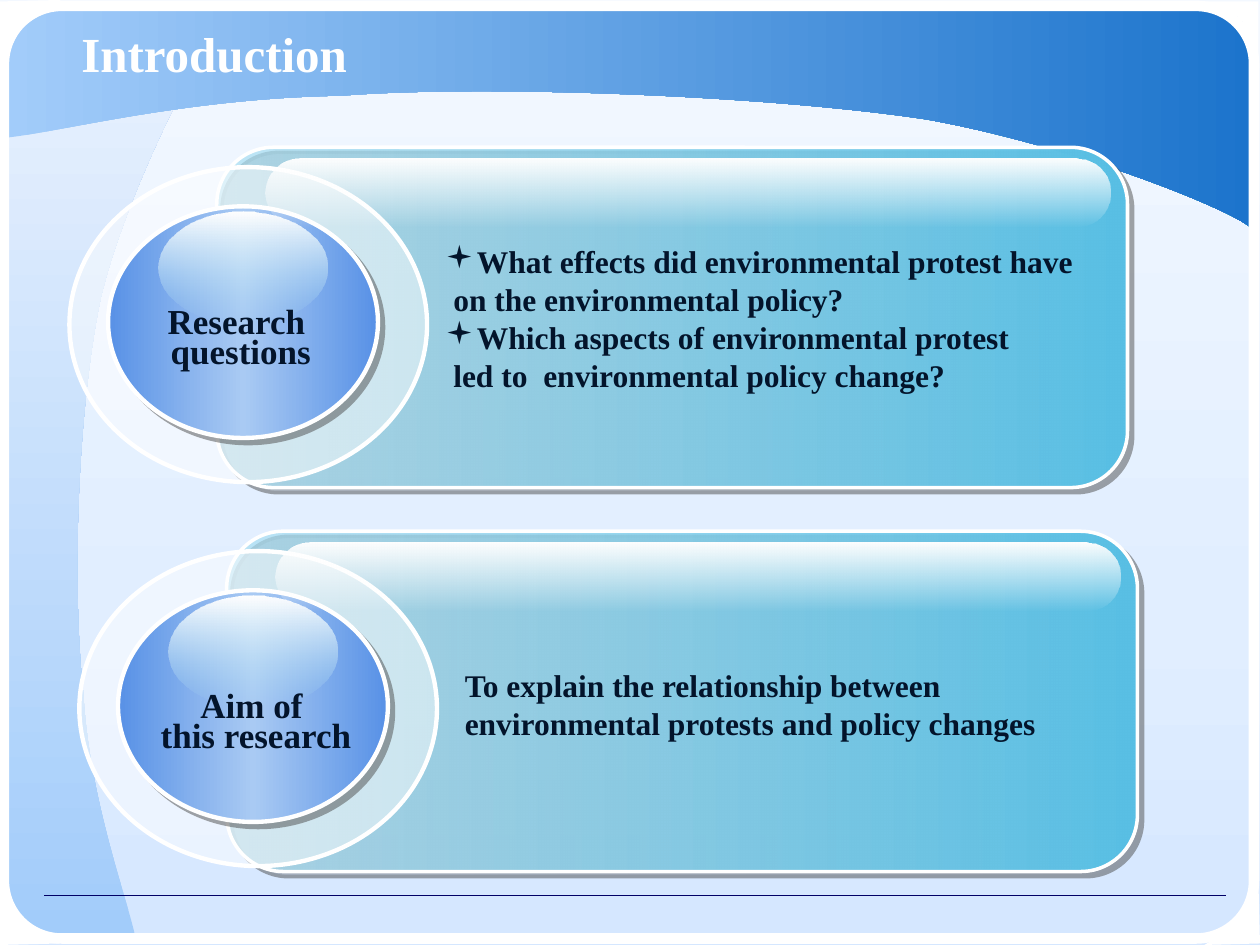
import pptx
import pptx.util
import pptx.dml.color
import pptx.enum.shapes
import pptx.enum.text
import pptx.oxml.ns
from lxml import etree

Cm, Pt = pptx.util.Cm, pptx.util.Pt
RGB = pptx.dml.color.RGBColor
KIND = pptx.enum.shapes.MSO_SHAPE
ALIGN = pptx.enum.text.PP_ALIGN
ANCHOR = pptx.enum.text.MSO_ANCHOR
qn = pptx.oxml.ns.qn

FONT = "Times New Roman"
WHITE = RGB(0xFF, 0xFF, 0xFF)
INK = RGB(0x03, 0x14, 0x2B)
NAVY = RGB(0x00, 0x00, 0x66)
GREY = RGB(0x4D, 0x4D, 0x4D)
SKY = RGB(0xA2, 0xCC, 0xFA)
PALE = RGB(0xEA, 0xF2, 0xFE)
DEEP = RGB(0x1C, 0x74, 0xCC)
AQUA = RGB(0xAA, 0xDF, 0xF2)
TEAL = RGB(0x59, 0xC0, 0xE5)
BLUE = RGB(0x58, 0x91, 0xE6)
SOFT = RGB(0xA9, 0xCA, 0xF3)
MIST = RGB(0xAC, 0xE0, 0xF2)

# Gradients: clockwise angle, then stops of place, colour and opacity in percent
BACK = (270, [(0, RGB(0xD5, 0xE7, 0xFF), 100), (35, RGB(0xE1, 0xEE, 0xFF), 100),
              (100, RGB(0xF3, 0xF8, 0xFF), 100)])
SIDE = (270, [(0, SKY, 100), (100, PALE, 100)])
BAND = (0, [(0, SKY, 100), (100, DEEP, 100)])
PANEL = (0, [(0, AQUA, 70), (100, TEAL, 100)])
BALL = (0, [(0, BLUE, 100), (50, SOFT, 100), (100, BLUE, 100)])
GLEAM = (90, [(0, WHITE, 100), (100, MIST, 0)])
GLOSS = (90, [(0, WHITE, 100), (100, WHITE, 0)])
VEIL = 49  # opacity of plain white

# Outlines in cm: a pair is a corner, six numbers are a Bezier curve
WAVES = [
    (SIDE, [(2.72, 18.85), (2.54, 18.03, 1.8, 16.1, 1.68, 13.97),
            (1.45, 11.84, 1.55, 8.33, 2.03, 6.02),
            (2.54, 3.84, 4.19, 0.66, 4.55, 0.43), (0.15, 0.43), (0.13, 18.85)]),
    (BAND, [(0.18, 2.77), (1.3, 2.64, 3.78, 1.98, 6.88, 1.93),
            (9.8, 1.7, 15.54, 1.93, 18.69, 2.41),
            (21.69, 2.95, 24.94, 4.27, 25.25, 4.62), (25.27, 0.2), (0.18, 0.18)]),
]
CORNERS = [
    [(1.22, 19.02), (0.48, 18.67), (0.13, 18.29), (0, 17.73), (0, 19.05)],
    [(0, 1.4), (0.1, 1.24, 0.33, 0.66, 0.53, 0.43),
     (0.71, 0.2, 1.27, 0.1, 1.22, 0), (0, 0.03)],
    [(25.37, 17.78), (25.07, 18.42), (24.66, 18.82), (24.28, 19.05), (25.4, 19.02)],
    [(24.16, 0.03), (24.28, 0.08, 24.69, 0.05, 25.04, 0.43),
     (25.37, 0.81, 25.32, 1.52, 25.37, 1.45), (25.37, 0.03)],
]

# Card parts: kind, box, corner, fill, line width, shadow
PARTS = [
    (KIND.ROUNDED_RECTANGLE, (4.37, 2.97, 18.36, 6.86), 0.167, PANEL, 2, True),
    (KIND.OVAL, (1.4, 3.37, 7.21, 6.35), None, VEIL, 2.5, False),
    (KIND.OVAL, (2.18, 4.16, 5.44, 4.67), None, BALL, 2.5, True),
    (KIND.OVAL, (3.2, 4.27, 3.4, 2.26), None, GLEAM, 0, False),
    (KIND.ROUNDED_RECTANGLE, (5.36, 3.2, 17.02, 1.37), 0.5, GLOSS, 0, False),
]
# Cards: shift, body box, body lines (bullet, text), label box, label lines
CARDS = [
    ((0.2, 7.74), (9.12, 13.3, 13.69, 1.8),
     [("", "To explain the relationship between environmental protests "
           "and policy changes")],
     (2.38, 13.89, 5.56, 1.45), ["Aim of ", "this research"]),
    ((0, 0), (8.73, 4.76, 14.88, 4.01),
     [("▪", "What effects did environmental protest have"),
      ("", " on the environmental policy?"),
      ("▪", "Which aspects of environmental protest"),
      ("", " led to  environmental policy change?")],
     (2.38, 6.15, 4.95, 1.47), ["Research ", "questions"]),
]


def blend(fill, root, grad):
    """Give fill the gradient; root is the element that holds it."""
    angle, stops = grad
    fill.gradient()
    fill.gradient_angle = -angle % 360
    row = next(root.iter(qn("a:gsLst")))
    for old in list(row):
        row.remove(old)
    for place, color, alpha in stops:
        stop = etree.SubElement(row, qn("a:gs"), pos=str(place * 1000))
        tint = etree.SubElement(stop, qn("a:srgbClr"), val=str(color))
        if alpha < 100:
            etree.SubElement(tint, qn("a:alpha"), val=str(alpha * 1000))


def whiten(shape, alpha=100):
    shape.fill.solid()
    shape.fill.fore_color.rgb = WHITE
    if alpha < 100:
        tint = next(shape.element.iter(qn("a:srgbClr")))
        etree.SubElement(tint, qn("a:alpha"), val=str(alpha * 1000))


def edge(shape, width):
    shape.shadow.inherit = False
    if width:
        shape.line.color.rgb = WHITE
        shape.line.width = Pt(width)
    else:
        shape.line.fill.background()


def shade(shape):
    """Cast a hard shadow to the lower right."""
    effects = next(shape.element.iter(qn("a:effectLst")))
    drop = etree.SubElement(effects, qn("a:outerShdw"), blurRad="0",
                            dist=str(Pt(4.2)), dir="2700000", algn="ctr", rotWithShape="0")
    tint = etree.SubElement(drop, qn("a:srgbClr"), val=str(GREY))
    etree.SubElement(tint, qn("a:alpha"), val="50000")


def trace(shapes, steps):
    """Draw a closed outline whose six-number steps become true curves."""
    dots = [(Cm(s[i]), Cm(s[i + 1])) for s in steps for i in range(0, len(s), 2)]
    pen = shapes.build_freeform(*dots[0], scale=1.0)
    pen.add_line_segments(dots[1:], close=True)
    shape = pen.convert_to_shape()
    legs = iter(list(shape.element.iter(qn("a:lnTo"))))
    for step in steps[1:]:
        leg = next(legs)
        if len(step) == 6:
            leg.addprevious(curve := etree.Element(qn("a:cubicBezTo")))
            for part in (leg, next(legs), next(legs)):
                curve.append(part[0])
                part.getparent().remove(part)
    return shape


def style(run, size, color):
    run.font.name, run.font.size, run.font.bold = FONT, Pt(size), True
    run.font.color.rgb = color


def write(shapes, box, lines, size, align=ALIGN.LEFT, gap=None):
    frame = shapes.add_textbox(*map(Cm, box)).text_frame
    frame.word_wrap = True
    for i, (mark, text) in enumerate(lines):
        para = frame.add_paragraph() if i else frame.paragraphs[0]
        para.alignment = align
        if gap:
            para.line_spacing = gap
        if mark:
            props = para._p.get_or_add_pPr()
            props.set("marL", str(Cm(0.6)))
            props.set("indent", str(-Cm(0.6)))
            etree.SubElement(props, qn("a:buFont"), typeface="Wingdings")
            etree.SubElement(props, qn("a:buChar"), char=mark)
        run = para.add_run()
        run.text = text
        style(run, size, INK)


deck = pptx.Presentation()
deck.slide_width, deck.slide_height = Cm(25.4), Cm(19.05)
slide = deck.slides.add_slide(deck.slide_layouts[5])
shapes = slide.shapes
blend(slide.background.fill, slide.element, BACK)

for grad, steps in WAVES:
    wave = trace(shapes, steps)
    edge(wave, 0)
    blend(wave.fill, wave.element, grad)
rule = shapes.add_connector(pptx.enum.shapes.MSO_CONNECTOR.STRAIGHT,
                            Cm(0.89), Cm(18.05), Cm(24.71), Cm(18.05))
rule.line.color.rgb, rule.line.width = NAVY, Pt(0.75)
etree.SubElement(rule.element.spPr, qn("a:effectLst"))

rim = shapes.add_group_shape().shapes
border = rim.add_shape(KIND.ROUNDED_RECTANGLE, *map(Cm, (0.08, 0.12, 25.2, 18.8)))
border.adjustments[0] = 0.062
border.fill.background()
edge(border, 6)
for steps in CORNERS:
    corner = trace(rim, steps)
    edge(corner, 0)
    whiten(corner)

title = shapes.title
title.left, title.top, title.width, title.height = map(Cm, (0.89, 0.31, 23.39, 1.5))
title.text_frame.margin_left = Cm(0.75)
title.text_frame.vertical_anchor = ANCHOR.MIDDLE
head = title.text_frame.paragraphs[0]
head.alignment = ALIGN.LEFT
name = head.add_run()
name.text = "Introduction"
style(name, 28, WHITE)
title.element.getparent().append(title.element)  # in front of the backdrop

for (dx, dy), body, lines, _, _ in CARDS:
    card = shapes.add_group_shape().shapes
    for kind, (x, y, w, h), bend, paint, width, shadow in PARTS:
        part = card.add_shape(kind, Cm(x + dx), Cm(y + dy), Cm(w), Cm(h))
        if bend:
            part.adjustments[0] = bend
        if paint == VEIL:
            whiten(part, VEIL)
        else:
            blend(part.fill, part.element, paint)
        edge(part, width)
        if shadow:
            shade(part)
    write(card, body, lines, 18)
for *_, spot, label in reversed(CARDS):
    write(shapes, spot, [("", text) for text in label], 20, ALIGN.CENTER, 0.7)

deck.save("out.pptx")
